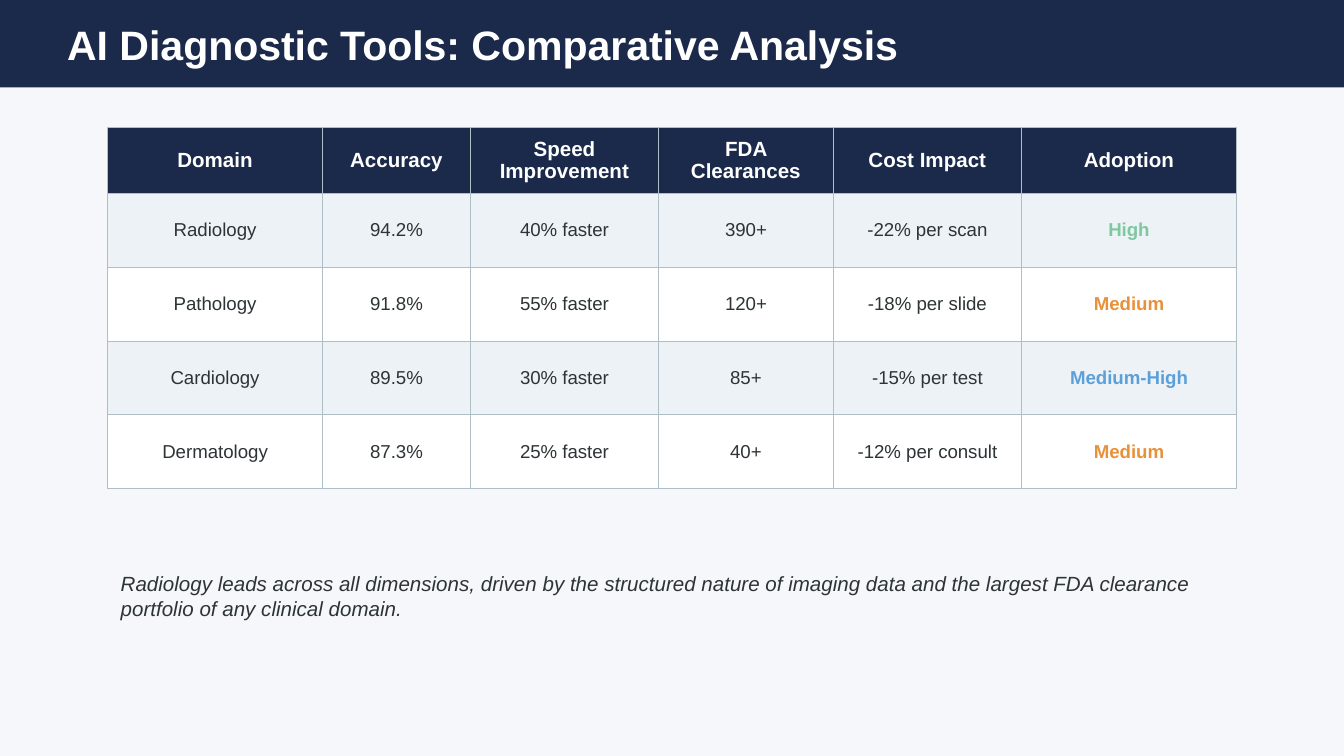
from lxml import etree
from pptx import Presentation
from pptx.dml.color import RGBColor
from pptx.enum.shapes import MSO_SHAPE as SHAPE
from pptx.enum.text import MSO_ANCHOR as ANCHOR, PP_ALIGN as ALIGN
from pptx.oxml.ns import qn
from pptx.util import Inches, Pt

# Layout grid: 100 columns across, rows half as high as a column is wide
COL, ROW = Inches(0.1), Inches(0.05)

NAVY, INK, WHITE, PALE = "1B2A4A", "2D3436", "FFFFFF", "EDF2F7"
BACKGROUND, BORDER = "F5F7FA", "B0BEC5"
LEVEL_COLORS = {"High": "7EC8A0", "Medium": "E8913A", "Medium-High": "5BA0D9"}

COLUMN_SPANS = [16, 11, 14, 13, 14, 16]
HEADER_ROWS, BODY_ROWS = 8, 11
TABLE = [
    ["Domain", "Accuracy", "Speed Improvement", "FDA Clearances", "Cost Impact", "Adoption"],
    ["Radiology", "94.2%", "40% faster", "390+", "-22% per scan", "High"],
    ["Pathology", "91.8%", "55% faster", "120+", "-18% per slide", "Medium"],
    ["Cardiology", "89.5%", "30% faster", "85+", "-15% per test", "Medium-High"],
    ["Dermatology", "87.3%", "25% faster", "40+", "-12% per consult", "Medium"],
]
NOTE = ("Radiology leads across all dimensions, driven by the structured nature of imaging data "
        "and the largest FDA clearance portfolio of any clinical domain.")


def rgb(color):
    return RGBColor.from_string(color)


def paint(part, color):
    part.fill.solid()
    part.fill.fore_color.rgb = rgb(color)


def place(left, top, width, height):
    """Turn a box in grid columns and rows into slide lengths."""
    return left * COL, top * ROW, width * COL, height * ROW


def write(tf, text, size, color, bold=False, italic=False, align=None):
    tf.word_wrap = True
    p = tf.paragraphs[0]
    p.text = text
    p.alignment = align
    font = p.font
    font.name, font.size, font.bold, font.italic = "Arial", Pt(size), bold, italic
    font.color.rgb = rgb(color)


def set_insets(part, x, y):
    part.margin_left = part.margin_right = Inches(x)
    part.margin_top = part.margin_bottom = Inches(y)


def add_borders(cell, color, width):
    tc_pr = cell._tc.get_or_add_tcPr()
    for i, side in enumerate(("a:lnL", "a:lnR", "a:lnT", "a:lnB")):
        line = etree.Element(qn(side), w=str(Pt(width)))
        fill = etree.SubElement(line, qn("a:solidFill"))
        etree.SubElement(fill, qn("a:srgbClr"), val=color)
        tc_pr.insert(i, line)


def add_title_band(slide, box, title, indent):
    left, top, width, height = box
    # Band
    sp = slide.shapes.add_shape(SHAPE.RECTANGLE, *place(*box))
    sp.shadow.inherit = False
    paint(sp, NAVY)
    sp.line.fill.background()
    # Title
    title_box = place(left + indent, top, width - 2 * indent, height)
    tf = slide.shapes.add_textbox(*title_box).text_frame
    set_insets(tf, 0, 0)
    tf.vertical_anchor = ANCHOR.MIDDLE
    write(tf, title, 22, WHITE, bold=True)


def add_comparison_table(slide, box, rows):
    frame = slide.shapes.add_table(len(rows), len(rows[0]), *place(*box))
    table = frame.table
    # Column widths and row heights
    for column, span in zip(table.columns, COLUMN_SPANS):
        column.width = span * COL
    for i, row in enumerate(table.rows):
        row.height = (BODY_ROWS if i else HEADER_ROWS) * ROW
    # The frame keeps its own height, so the header grows only to fit its text
    frame.height = box[3] * ROW
    # Cells
    for i, values in enumerate(rows):
        fill = NAVY if i == 0 else PALE if i % 2 else WHITE
        for j, value in enumerate(values):
            cell = table.cell(i, j)
            paint(cell, fill)
            add_borders(cell, BORDER, 0.5)
            set_insets(cell, 0.08, 0.06)
            cell.vertical_anchor = ANCHOR.MIDDLE
            color = LEVEL_COLORS.get(value, INK) if i else WHITE
            write(cell.text_frame, value, 10 if i else 11, color,
                  bold=color != INK, align=ALIGN.CENTER)


def add_note(slide, box, text):
    tf = slide.shapes.add_textbox(*place(*box)).text_frame
    write(tf, text, 11, INK, italic=True)


def main():
    prs = Presentation()
    prs.slide_width = Inches(10)
    prs.slide_height = prs.slide_width * 9 // 16
    slide = prs.slides.add_slide(prs.slide_layouts[6])
    paint(slide.background, BACKGROUND)

    table_width = sum(COLUMN_SPANS)
    add_title_band(slide, (0, 0, 100, 13), "AI Diagnostic Tools: Comparative Analysis", indent=5)
    add_comparison_table(slide, (8, 19, table_width, 20), TABLE)
    add_note(slide, (8, 84, table_width, 10), NOTE)
    prs.save("out.pptx")


if __name__ == "__main__":
    main()
